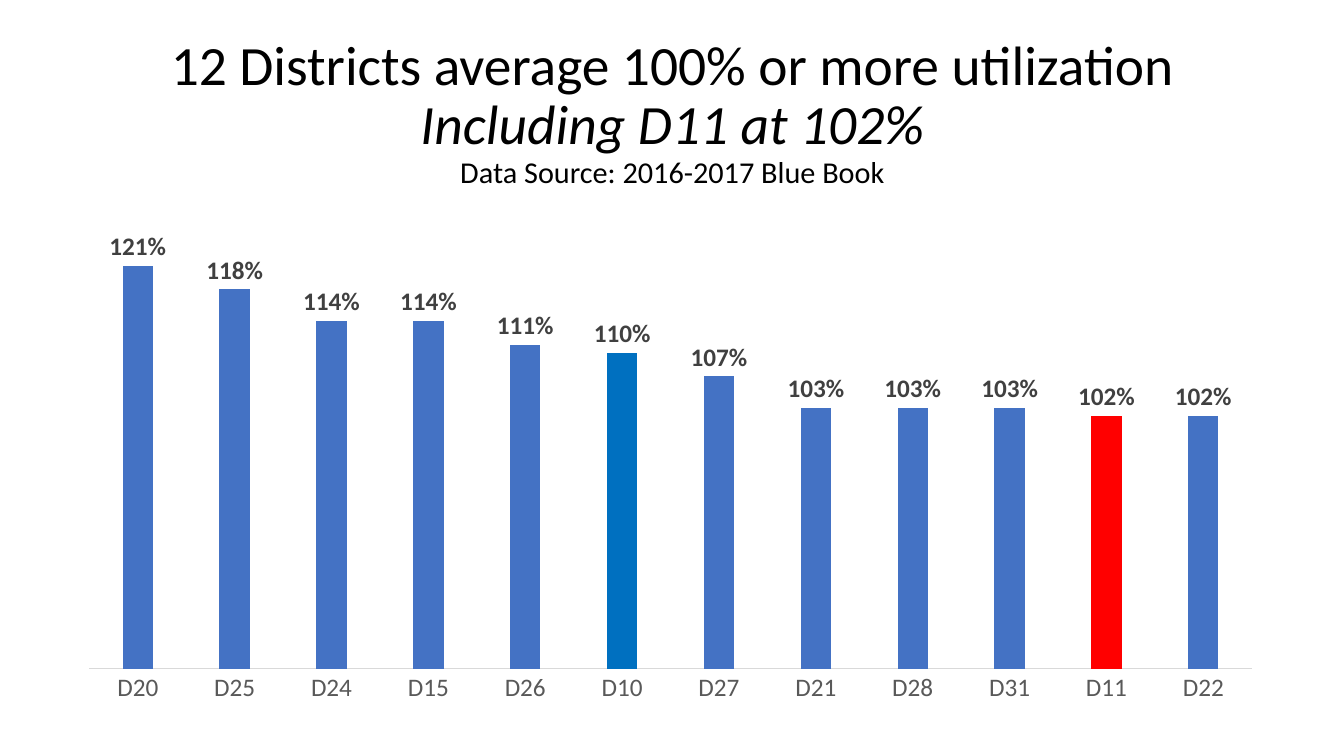
"""Build the district utilization slide."""
from copy import deepcopy
from dataclasses import dataclass

from lxml.etree import SubElement
from pptx import Presentation
from pptx.chart.data import CategoryChartData
from pptx.dml.color import RGBColor
from pptx.enum.chart import XL_CHART_TYPE as ChartType
from pptx.enum.chart import XL_LABEL_POSITION as LabelPosition
from pptx.enum.chart import XL_TICK_MARK as TickMark
from pptx.enum.text import MSO_ANCHOR as Anchor
from pptx.enum.text import MSO_AUTO_SIZE as AutoSize
from pptx.enum.text import PP_ALIGN as Align
from pptx.oxml.ns import qn
from pptx.util import Inches, Pt


@dataclass(frozen=True)
class Theme:
    """Colours, font and type sizes."""
    font: str = "Calibri"
    title: str = "000000"
    bar: str = "4472C4"
    accent: str = "0070C0"
    highlight: str = "FF0000"
    axis_text: str = "595959"
    axis_line: str = "D9D9D9"
    label: str = "404040"
    title_size: float = 39.6
    source_size: float = 21.6
    chart_size: float = 18


class SlideBuilder:
    """Hold the theme and the current slide."""

    def __init__(self, presentation, theme):
        """Add a title-only slide."""
        self.theme = theme
        self.slide = presentation.slides.add_slide(presentation.slide_layouts[5])

    def style(self, font, size, color, bold=False, italic=False):
        """Format a font."""
        font.name, font.size = self.theme.font, Pt(size)
        font.bold, font.italic = bold, italic
        font.color.rgb = RGBColor.from_string(color)

    def paint(self, fill, color):
        """Apply a solid fill."""
        fill.solid()
        fill.fore_color.rgb = RGBColor.from_string(color)

    def title(self, box, lines):
        """Fill the title with lines of (text, size, italic)."""
        shape = self.slide.shapes.title
        shape.left, shape.top, shape.width, shape.height = map(Inches, box)
        frame = shape.text_frame
        frame.word_wrap, frame.auto_size = True, AutoSize.NONE
        frame.vertical_anchor = Anchor.MIDDLE
        paragraph = frame.paragraphs[0]
        paragraph.alignment, paragraph.line_spacing = Align.CENTER, 0.9
        for index, (text, size, italic) in enumerate(lines):
            run = paragraph.add_run()
            run.text = text
            self.style(run.font, size, self.theme.title, italic=italic)
            if index < len(lines) - 1:
                paragraph.add_line_break()
                paragraph._p[-1].append(deepcopy(run._r.rPr))

    def column_chart(self, box, values, point_colors, plot):
        """Add a labelled column chart with highlighted categories."""
        theme = self.theme
        data = CategoryChartData(number_format="0%")
        data.categories = list(values)
        data.add_series("Utilization", list(values.values()))
        frame = self.slide.shapes.add_chart(
            ChartType.COLUMN_CLUSTERED, *map(Inches, box), data)
        chart = frame.chart
        chart.has_legend = chart.has_title = False
        self.style(chart.font, theme.chart_size, theme.axis_text)

        value_axis = chart.value_axis
        value_axis.minimum_scale, value_axis.maximum_scale = 0.7, 1.3
        value_axis.has_major_gridlines = value_axis.visible = False
        category_axis = chart.category_axis
        category_axis.major_tick_mark = category_axis.minor_tick_mark = TickMark.NONE
        self.style(category_axis.tick_labels.font, theme.chart_size, theme.axis_text)
        category_axis.format.line.width = Pt(0.75)
        self.paint(category_axis.format.line.fill, theme.axis_line)

        columns = chart.plots[0]
        columns.gap_width, columns.overlap = 219, -27
        columns.vary_by_categories = False
        series = columns.series[0]
        self.paint(series.format.fill, theme.bar)
        for category, color in point_colors.items():
            point = series.points[list(values).index(category)]
            self.paint(point.format.fill, color)
        labels = series.data_labels
        labels.show_value, labels.position = True, LabelPosition.OUTSIDE_END
        labels.number_format, labels.number_format_is_linked = "0%", False
        self.style(labels.font, theme.chart_size, theme.label, bold=True)
        self.place_plot(chart, plot)

    def place_plot(self, chart, plot):
        """Fix the inner plot area as fractions of the chart."""
        area = chart._chartSpace.chart.plotArea
        layout = area.find(qn("c:layout"))
        if layout is None:
            layout = SubElement(area, qn("c:layout"))
            area.insert(0, layout)
        manual = SubElement(layout, qn("c:manualLayout"))
        settings = [("layoutTarget", "inner"), ("xMode", "edge"), ("yMode", "edge")]
        settings += zip("xywh", plot)
        for tag, value in settings:
            SubElement(manual, qn(f"c:{tag}")).set("val", str(value))


def main():
    """Create and save the presentation."""
    presentation = Presentation()
    presentation.slide_width, presentation.slide_height = Inches(13.33), Inches(7.5)
    theme = Theme()
    builder = SlideBuilder(presentation, theme)
    builder.title((0.92, 0.4, 11.5, 1.45), [
        ("12 Districts average 100% or more utilization", theme.title_size, False),
        ("Including D11 at 102%", theme.title_size, True),
        ("Data Source: 2016-2017 Blue Book", theme.source_size, False),
    ])
    utilization = {
        "D20": 1.21, "D25": 1.18, "D24": 1.14, "D15": 1.14,
        "D26": 1.11, "D10": 1.10, "D27": 1.07, "D21": 1.03,
        "D28": 1.03, "D31": 1.03, "D11": 1.02, "D22": 1.02,
    }
    builder.column_chart(
        (0.53, 1.93, 11.89, 5.17), utilization,
        {"D10": theme.accent, "D11": theme.highlight}, (0.03, 0, 0.97, 0.91))
    presentation.save("out.pptx")


if __name__ == "__main__":
    main()
